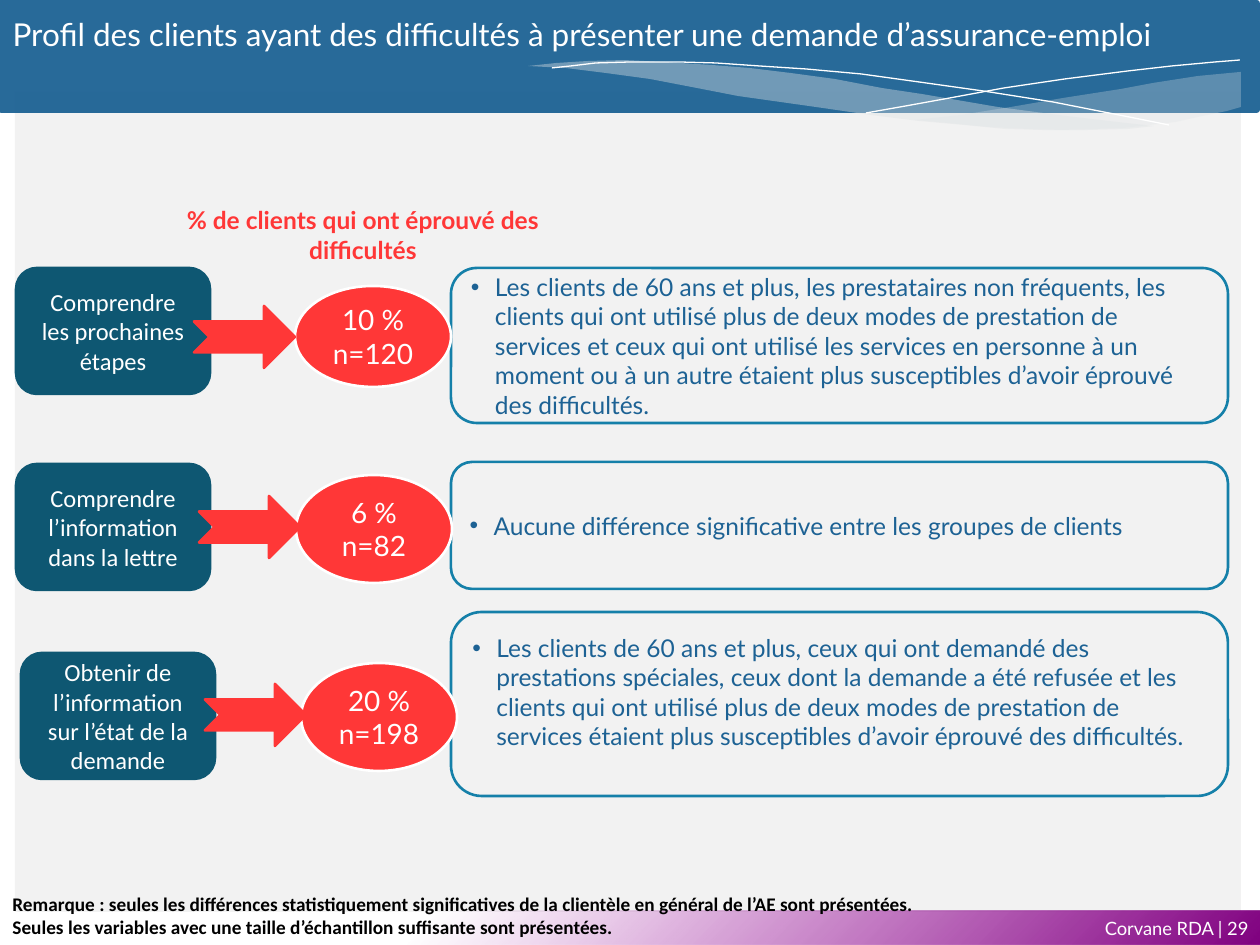
import pptx
import pptx.dml.color
import pptx.enum.shapes
import pptx.enum.text
import pptx.oxml
import pptx.oxml.ns
import pptx.util

PX = 914400 // 126
SHAPE = pptx.enum.shapes.MSO_SHAPE
ALIGN = pptx.enum.text.PP_ALIGN
ANCHOR = pptx.enum.text.MSO_ANCHOR
NAMESPACE = pptx.oxml.ns.nsdecls("a")

WHITE, RED, BLUE = "FFFFFF", "FF3737", "1D6294"
CARD, OUTLINE, MIST = "0E5772", "1580A9", "DFE3E5"

# Wave outlines in the header, in px from the slide's corner
RIGHT_WAVE = [(1240, 72), (1198, 76), (1153, 83), (1121, 89), (1063, 98),
              (1011, 107), (961, 115), (915, 120), (947, 123), (988, 127),
              (1027, 129), (1062, 130), (1095, 129), (1124, 128), (1150, 125),
              (1176, 122), (1198, 117), (1227, 111), (1241, 107), (1241, 72)]
LEFT_WAVE = [(1154, 126), (1126, 123), (1066, 116), (998, 107), (922, 94),
             (882, 88), (835, 79), (791, 73), (750, 68), (712, 65), (665, 62),
             (624, 60), (587, 61), (556, 63), (528, 66), (566, 68), (606, 73),
             (650, 79), (697, 88), (738, 96), (816, 107), (871, 115),
             (919, 121), (965, 125), (1005, 129), (1043, 130), (1087, 130),
             (1128, 129)]
FALLING_LINE = [(552, 68), (571, 66), (596, 63), (631, 62), (679, 62),
                (716, 63), (759, 66), (806, 69), (861, 74), (919, 82),
                (983, 91), (1053, 102), (1129, 117), (1169, 125)]
RISING_LINE = [(866, 113), (906, 106), (950, 98), (1004, 88), (1065, 79),
               (1128, 71), (1172, 66), (1215, 62), (1240, 60)]

ROWS = [
    dict(card=(16, 268), arrow=(178, 38), oval=(279, 18, 101), panel=(268, 155), raised=0,
         label="Comprendre les prochaines étapes", figures=("10 %", "n=120"),
         finding="Les clients de 60 ans et plus, les prestataires non fréquents, les clients "
                 "qui ont utilisé plus de deux modes de prestation de services et ceux qui ont "
                 "utilisé les services en personne à un moment ou à un autre étaient plus "
                 "susceptibles d’avoir éprouvé des difficultés."),
    dict(card=(16, 464), arrow=(183, 32), oval=(280, 11, 108), panel=(462, 127), raised=0,
         label="Comprendre l’information dans la lettre", figures=("6 %", "n=82"),
         finding="Aucune différence significative entre les groupes de clients"),
    dict(card=(21, 653), arrow=(184, 31), oval=(280, 10, 108), panel=(612, 184), raised=24,
         label="Obtenir de l’information sur l’état de la demande", figures=("20 %", "n=198"),
         finding="Les clients de 60 ans et plus, ceux qui ont demandé des prestations spéciales, "
                 "ceux dont la demande a été refusée et les clients qui ont utilisé plus de deux "
                 "modes de prestation de services étaient plus susceptibles d’avoir éprouvé des "
                 "difficultés."),
]


def rgb(color):
    return pptx.dml.color.RGBColor.from_string(color)


def paint(shape, fill=None, line=None, width=1.5, alpha=None):
    shape.shadow.inherit = False
    if fill:
        shape.fill.solid()
        shape.fill.fore_color.rgb = rgb(fill)
        if alpha:
            color = shape.fill._xPr.find(".//" + pptx.oxml.ns.qn("a:srgbClr"))
            color.append(pptx.oxml.parse_xml(f'<a:alpha {NAMESPACE} val="{alpha * 1000}"/>'))
    else:
        shape.fill.background()
    if line:
        shape.line.color.rgb = rgb(line)
        shape.line.width = pptx.util.Pt(width)
    else:
        shape.line.fill.background()


def add_block(slide, kind, box, fill=None, line=None, alpha=None):
    shape = slide.shapes.add_shape(kind, *(value * PX for value in box))
    paint(shape, fill, line, alpha=alpha)
    return shape


def write(shape, lines, size, color, font="Lato", align=ALIGN.CENTER,
          anchor=ANCHOR.MIDDLE, bold=False, wrap=True):
    frame = shape.text_frame
    frame.word_wrap = wrap
    frame.vertical_anchor = anchor
    frame.text = "\n".join(lines)
    for paragraph in frame.paragraphs:
        paragraph.alignment = align
        paragraph.font.name = font
        paragraph.font.size = pptx.util.Pt(size)
        paragraph.font.bold = bold
        paragraph.font.color.rgb = rgb(color)


def add_text(slide, box, lines, size, color, **style):
    write(slide.shapes.add_textbox(*(value * PX for value in box)), lines, size, color, **style)


def add_wave(slide, points, fill=None, line=None, alpha=None):
    builder = slide.shapes.build_freeform(*points[0], scale=PX)
    builder.add_line_segments(points[1:], close=fill is not None)
    paint(builder.convert_to_shape(), fill, line, 0, alpha)


def add_bullet(paragraph):
    properties = paragraph._p.get_or_add_pPr()
    properties.set("marL", str(24 * PX))
    properties.set("indent", str(-24 * PX))
    properties.append(pptx.oxml.parse_xml(f'<a:buFont {NAMESPACE} typeface="Arial"/>'))
    properties.append(pptx.oxml.parse_xml(f'<a:buChar {NAMESPACE} char="•"/>'))


def build_header(slide, box):
    banner = add_block(slide, SHAPE.ROUNDED_RECTANGLE, box, BLUE, alpha=95)
    banner.adjustments[0] = 0.03
    add_wave(slide, RIGHT_WAVE, MIST, alpha=29)
    add_wave(slide, LEFT_WAVE, MIST, alpha=40)
    for points in (FALLING_LINE, RISING_LINE):
        add_wave(slide, points, line=WHITE)

    # The title goes in front of the banner
    title = slide.shapes.title
    left, top = box[:2]
    title.left, title.top, title.width, title.height = (
        value * PX for value in (left + 2, top + 9, 1260, 84))
    write(title, ["Profil des clients ayant des difficultés à présenter une demande "
                  "d’assurance-emploi"], 18, WHITE, align=ALIGN.LEFT, anchor=ANCHOR.TOP)
    title.element.getparent().append(title.element)


def build_footer(slide, box):
    left, top = box[:2]
    band = add_block(slide, SHAPE.RECTANGLE, box, WHITE)
    gradient = pptx.oxml.parse_xml(
        f'<a:gradFill {NAMESPACE}><a:gsLst>'
        '<a:gs pos="0"><a:srgbClr val="800080"/></a:gs>'
        '<a:gs pos="66000"><a:srgbClr val="9A009A"><a:alpha val="0"/></a:srgbClr></a:gs>'
        '</a:gsLst><a:path path="circle"><a:fillToRect l="100000" t="100000"/></a:path>'
        '</a:gradFill>')
    solid = band.element.spPr.find(pptx.oxml.ns.qn("a:solidFill"))
    solid.getparent().replace(solid, gradient)
    add_text(slide, (left + 3, top - 14, 1260, 62), ["Corvane RDA | 29"], 10.5, WHITE,
             align=ALIGN.RIGHT)
    add_text(slide, (left + 2, top - 25, 940, 59),
             ["Remarque : seules les différences statistiquement significatives de la "
              "clientèle en général de l’AE sont présentées.",
              "Seules les variables avec une taille d’échantillon suffisante sont présentées."],
             11, "000000", font="Calibri", align=ALIGN.LEFT, anchor=ANCHOR.TOP,
             bold=True, wrap=False)


def build_row(slide, row):
    left, top = row["card"]

    # Finding
    panel_top, panel_height = row["panel"]
    panel = add_block(slide, SHAPE.ROUNDED_RECTANGLE, (451, panel_top, 777, panel_height),
                      line=OUTLINE)
    write(panel, [row["finding"]], 14, BLUE, align=ALIGN.LEFT)
    panel.text_frame.margin_bottom += row["raised"] * PX
    add_bullet(panel.text_frame.paragraphs[0])

    # Difficulty, arrow and share of clients
    card = add_block(slide, SHAPE.ROUNDED_RECTANGLE, (left, top, 194, 126), CARD, CARD)
    write(card, [row["label"]], 14, WHITE, font="Calibri")
    oval_left, oval_top, oval_height = row["oval"]
    oval = add_block(slide, SHAPE.OVAL, (left + oval_left, top + oval_top, 156, oval_height),
                     RED, WHITE)
    write(oval, row["figures"], 16, WHITE)
    arrow_left, arrow_top = row["arrow"]
    add_block(slide, SHAPE.NOTCHED_RIGHT_ARROW,
              (left + arrow_left, top + arrow_top, 101, 62), RED, RED)


def main():
    presentation = pptx.Presentation()
    presentation.slide_width = 1260 * PX
    presentation.slide_height = 945 * PX
    slide = presentation.slides.add_slide(presentation.slide_layouts[5])

    add_block(slide, SHAPE.RECTANGLE, (15, 92, 1226, 820), "F2F2F2")
    build_footer(slide, (-2, 911, 1262, 34))
    build_header(slide, (-2, 0, 1262, 113))
    add_text(slide, (166, 199, 394, 43), ["% de clients qui ont éprouvé des difficultés"],
             14, RED, anchor=ANCHOR.TOP, bold=True)
    for row in ROWS:
        build_row(slide, row)
    presentation.save("out.pptx")


if __name__ == "__main__":
    main()
